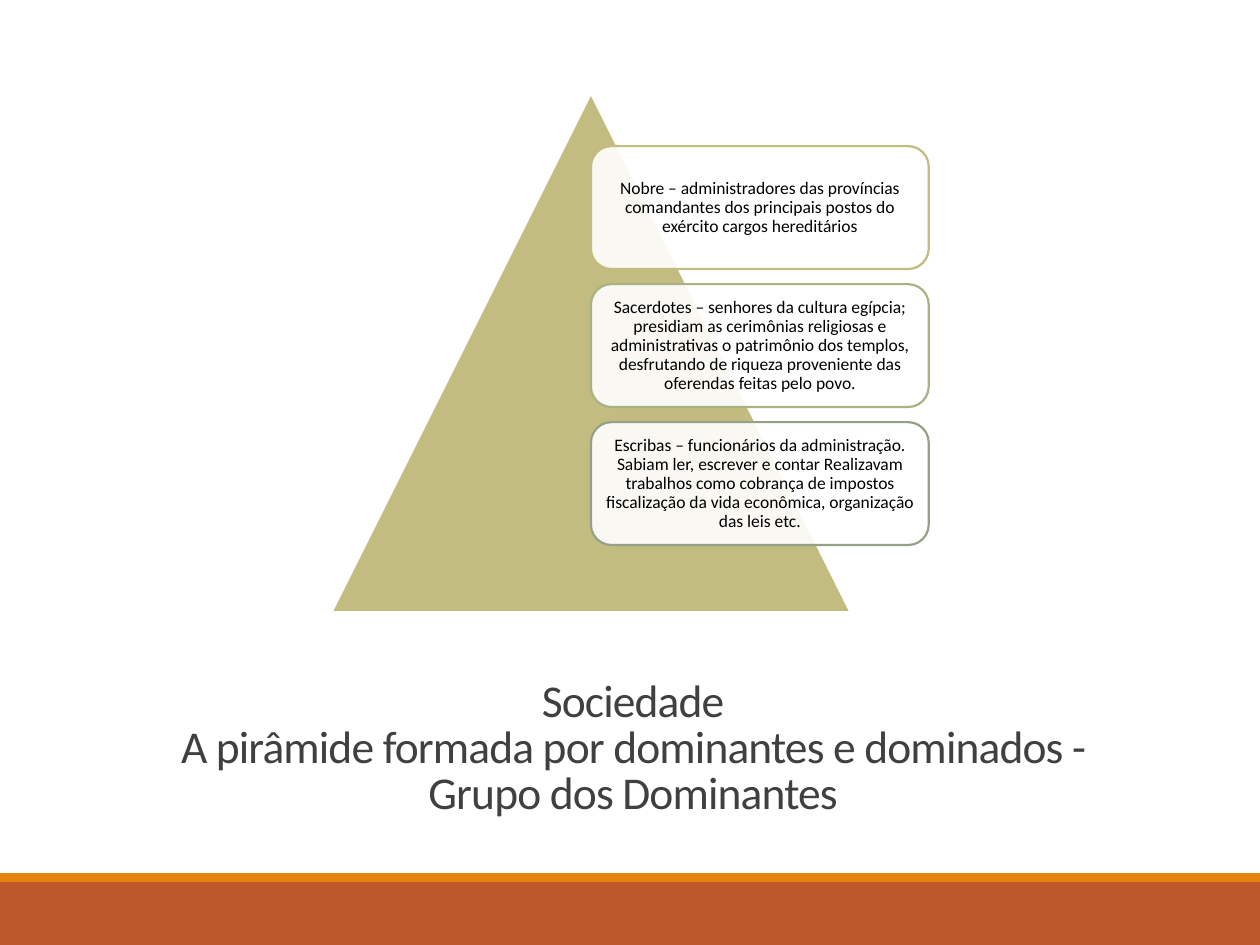
from dataclasses import dataclass

from lxml import etree
from pptx import Presentation
from pptx import util as u
from pptx.dml.color import RGBColor
from pptx.enum import shapes, text
from pptx.oxml.ns import qn

Pt = u.Pt
KIND = shapes.MSO_SHAPE


@dataclass(frozen=True)
class Theme:
    font: str = "Calibri"
    head: str = "404040"
    body: str = "000000"
    paper: str = "FFFFFF"
    sand: str = "C2BC80"
    moss: str = "A8B283"
    sage: str = "94A088"
    rust: str = "BD582C"
    amber: str = "E48312"
    big: float = 26
    small: float = 10
    line: float = 1.25


@dataclass(frozen=True)
class Box:
    x: float
    y: float
    w: float
    h: float


@dataclass(frozen=True)
class Card:
    words: str
    edge: str


T = Theme()
WIDE, HIGH = 720, 540

# Card column: first box and the step from one top to the next
FIRST = Box(337.7, 83.5, 193, 70.2)
STEP = 78.86

TITLE = "Sociedade\nA pirâmide formada por dominantes e dominados - Grupo dos Dominantes"
CARDS = [
    Card("Nobre – administradores das províncias comandantes dos principais "
         "postos do exército cargos hereditários", T.sand),
    Card("Sacerdotes – senhores da cultura egípcia; presidiam as cerimônias "
         "religiosas e administrativas o patrimônio dos templos, desfrutando "
         "de riqueza proveniente das oferendas feitas pelo povo.", T.moss),
    Card("Escribas – funcionários da administração. Sabiam ler, escrever e "
         "contar Realizavam trabalhos como cobrança de impostos fiscalização "
         "da vida econômica, organização das leis etc.", T.sage),
]


def write(shape, words: str, *, size: float, color: str, lead: float,
          inset: tuple[float, float], track: float = 0) -> None:
    """Fill a shape with centred text; a newline becomes a line break."""
    frame = shape.text_frame
    frame.word_wrap = True
    frame.auto_size = text.MSO_AUTO_SIZE.NONE
    frame.vertical_anchor = text.MSO_ANCHOR.MIDDLE
    frame.margin_left = frame.margin_right = Pt(inset[0])
    frame.margin_top = frame.margin_bottom = Pt(inset[1])
    para = frame.paragraphs[0]
    para.alignment = text.PP_ALIGN.CENTER
    para.line_spacing = lead
    for i, part in enumerate(words.split("\n")):
        if i:
            para.add_line_break()
        run = para.add_run()
        run.text = part
        run.font.name = T.font
        run.font.size = Pt(size)
        run.font.color.rgb = RGBColor.from_string(color)
        if track:
            run.font._element.set("spc", str(round(track * 100)))


def draw(slide, kind, box: Box, fill: str, *, edge: str = "", alpha: int = 100):
    """Add a flat preset shape, with an outline only when edge is given."""
    shape = slide.shapes.add_shape(kind, Pt(box.x), Pt(box.y), Pt(box.w), Pt(box.h))
    shape.shadow.inherit = False
    shape.fill.solid()
    shape.fill.fore_color.rgb = RGBColor.from_string(fill)
    if alpha < 100:
        tone = shape._element.spPr.find(qn("a:solidFill"))[0]
        etree.SubElement(tone, qn("a:alpha")).set("val", str(alpha * 1000))
    if edge:
        shape.line.color.rgb = RGBColor.from_string(edge)
        shape.line.width = Pt(T.line)
    else:
        shape.line.fill.background()
    return shape


def main() -> None:
    deck = Presentation()
    deck.slide_width, deck.slide_height = Pt(WIDE), Pt(HIGH)
    slide = deck.slides.add_slide(deck.slide_layouts[5])

    # Footer bands
    draw(slide, KIND.RECTANGLE, Box(0, 504, WIDE, 36), T.rust)
    draw(slide, KIND.RECTANGLE, Box(0, 499, WIDE, 5), T.amber)

    # Title
    title = slide.shapes.title
    title.left, title.top = Pt(64.8), Pt(381.6)
    title.width, title.height = Pt(594), Pt(93.6)
    write(title, TITLE, size=T.big, color=T.head, lead=0.85,
          inset=(7.2, 3.6), track=-0.5)

    # Pyramid
    draw(slide, KIND.ISOSCELES_TRIANGLE, Box(189.4, 53.3, 296.6, 296.6),
         T.sand, edge=T.paper)

    # Ruling groups
    for i, card in enumerate(CARDS):
        box = Box(FIRST.x, FIRST.y + i * STEP, FIRST.w, FIRST.h)
        shape = draw(slide, KIND.ROUNDED_RECTANGLE, box, T.paper,
                     edge=card.edge, alpha=90)
        write(shape, card.words, size=T.small, color=T.body, lead=0.9,
              inset=(3, 3))

    deck.save("out.pptx")


if __name__ == "__main__":
    main()
